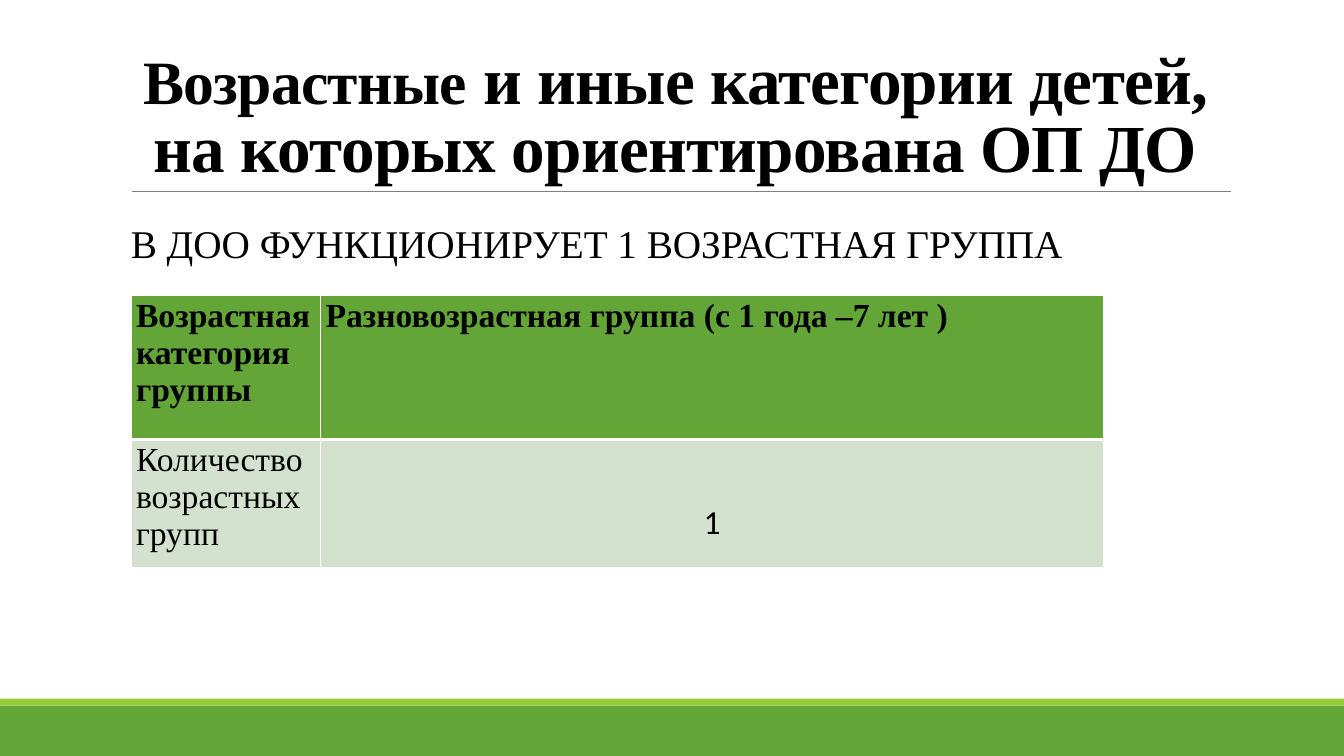
import pptx
import pptx.dml.color
import pptx.enum.shapes
import pptx.enum.text
import pptx.oxml
import pptx.oxml.ns
import pptx.util

SLIDE_WIDTH = pptx.util.Inches(13.33)
SLIDE_HEIGHT = pptx.util.Inches(7.5)
GREEN = "63A537"
LIME = "99CB38"
PALE_GREEN = "D3E1CE"
SERIF = "Times New Roman"
CENTER = pptx.enum.text.PP_ALIGN.CENTER
LEFT = pptx.enum.text.PP_ALIGN.LEFT
MIDDLE = pptx.enum.text.MSO_ANCHOR.MIDDLE
BOTTOM = pptx.enum.text.MSO_ANCHOR.BOTTOM


def across(percent):
    return round(SLIDE_WIDTH * percent / 100)


def down(percent):
    return round(SLIDE_HEIGHT * percent / 100)


def area(left, top, width, height):
    return across(left), down(top), across(width), down(height)


def color(value):
    return pptx.dml.color.RGBColor.from_string(value)


def write(paragraph, text, size=24, font=SERIF, bold=False, align=LEFT,
          line_spacing=None, before=0, after=0, tracking=None):
    paragraph.alignment = align
    paragraph.line_spacing = line_spacing
    paragraph.space_before = pptx.util.Pt(before)
    paragraph.space_after = pptx.util.Pt(after)
    run = paragraph.add_run()
    run.text = text
    run.font.size = pptx.util.Pt(size)
    run.font.name = font
    run.font.bold = bold
    run.font.color.rgb = color("000000")
    if tracking is not None:
        run.font._element.set("spc", str(round(tracking * 100)))


def add_band(slide, top, height, fill):
    band = slide.shapes.add_shape(
        pptx.enum.shapes.MSO_SHAPE.RECTANGLE, *area(0, top, 100, height))
    band.shadow.inherit = False
    band.fill.solid()
    band.fill.fore_color.rgb = color(fill)
    band.line.fill.background()


def add_rule(slide, start, end, level):
    rule = slide.shapes.add_connector(
        pptx.enum.shapes.MSO_CONNECTOR.STRAIGHT,
        across(start), down(level), across(end), down(level))
    rule.line.color.rgb = color("808080")
    rule.line.width = pptx.util.Pt(0.5)
    rule._element.spPr.append(pptx.oxml.parse_xml(
        f'<a:effectLst {pptx.oxml.ns.nsdecls("a")}/>'))


def add_text(slide, place, anchor):
    frame = slide.shapes.add_textbox(*place).text_frame
    frame.word_wrap = True
    frame.vertical_anchor = anchor
    return frame.paragraphs[0]


def set_borders(cell, **widths):
    properties = cell._tc.get_or_add_tcPr()
    for position, side in enumerate("LRTB"):
        width = pptx.util.Pt(widths.get(side, 1))
        properties.insert(position, pptx.oxml.parse_xml(
            f'<a:ln{side} {pptx.oxml.ns.nsdecls("a")} w="{width}"><a:solidFill>'
            f'<a:srgbClr val="FFFFFF"/></a:solidFill></a:ln{side}>'))


def fill_cell(cell, text, fill, borders, **text_format):
    cell.margin_left = cell.margin_right = pptx.util.Inches(0.05)
    cell.margin_top = cell.margin_bottom = pptx.util.Inches(0.02)
    cell.fill.solid()
    cell.fill.fore_color.rgb = color(fill)
    set_borders(cell, **borders)
    write(cell.text_frame.paragraphs[0], text, **text_format)


def add_group_table(slide):
    column_shares = (14.1, 58.29)
    row_shares = (19.07, 16.93)
    groups = slide.shapes.add_table(2, 2, *area(
        9.75, 39.07, sum(column_shares), sum(row_shares))).table
    for column, share in zip(groups.columns, column_shares):
        column.width = across(share)
    for row, share in zip(groups.rows, row_shares):
        row.height = down(share)
    headings = ("Возрастная категория группы",
                "Разновозрастная группа (с 1 года –7 лет )")
    for index, heading in enumerate(headings):
        fill_cell(groups.cell(0, index), heading, GREEN, {"B": 3}, bold=True)
    fill_cell(groups.cell(1, 0), "Количество возрастных групп", PALE_GREEN, {"T": 3})
    fill_cell(groups.cell(1, 1), "1", PALE_GREEN, {"T": 3},
              font="Calibri", align=CENTER, line_spacing=2.5)


def main():
    deck = pptx.Presentation()
    deck.slide_width = SLIDE_WIDTH
    deck.slide_height = SLIDE_HEIGHT
    slide = deck.slides.add_slide(deck.slide_layouts[6])

    add_band(slide, 93.33, 6.67, GREEN)
    add_band(slide, 92.4, 0.93, LIME)
    add_rule(slide, 9.83, 91.6, 25.33)

    title = add_text(slide, area(9, 4.13, 82.5, 21.2), BOTTOM)
    title_format = dict(bold=True, align=CENTER, line_spacing=0.85, tracking=-0.5)
    write(title, "Возрастные", size=44, **title_format)
    write(title, " и иные категории детей, на которых ориентирована ОП ДО",
          size=48, **title_format)

    subtitle = add_text(slide, area(9, 28.67, 79.75, 7.73), MIDDLE)
    write(subtitle, "В ДОО ФУНКЦИОНИРУЕТ 1 ВОЗРАСТНАЯ ГРУППА",
          size=28, line_spacing=0.9, before=12, after=2)

    add_group_table(slide)
    deck.save("out.pptx")


if __name__ == "__main__":
    main()
